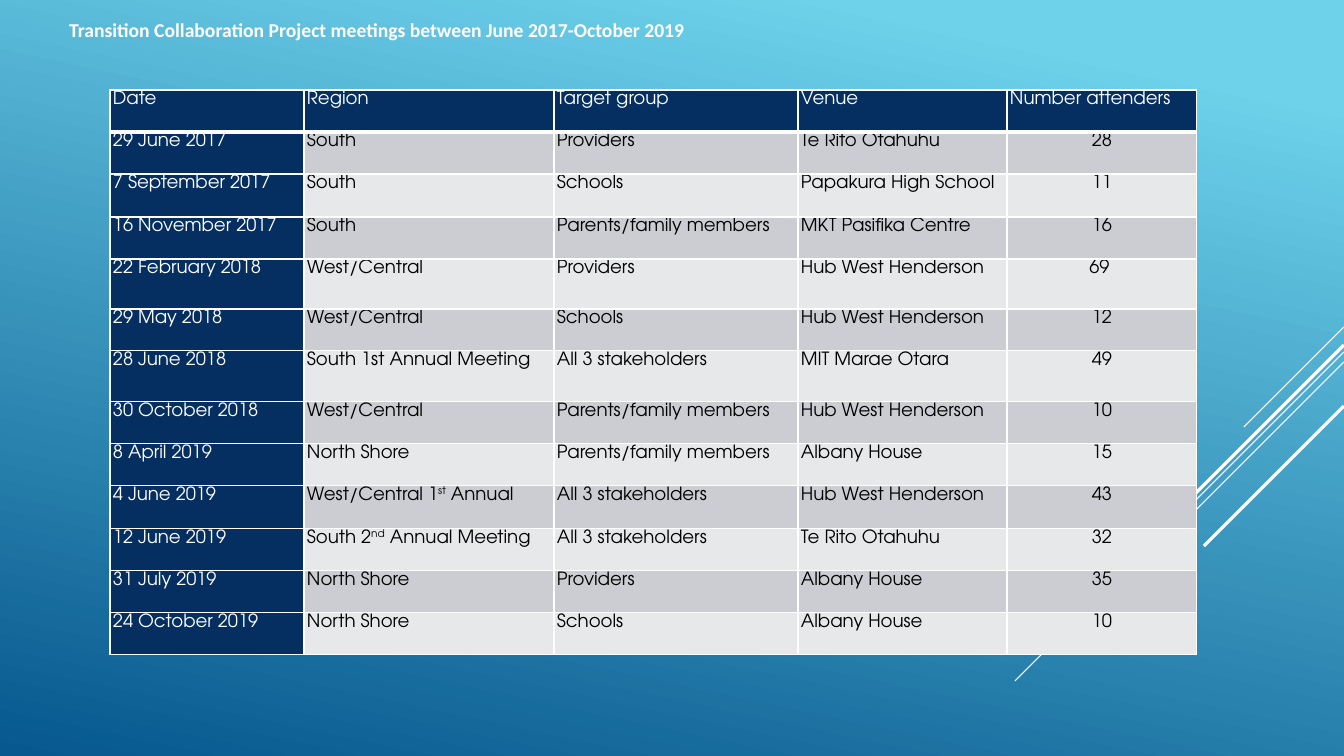
from itertools import pairwise

from lxml.etree import SubElement
from pptx import Presentation
from pptx.dml.color import RGBColor
from pptx.enum.shapes import MSO_CONNECTOR
from pptx.enum.text import MSO_ANCHOR, MSO_AUTO_SIZE, PP_ALIGN
from pptx.oxml.ns import qn
from pptx.util import Pt

WHITE = RGBColor(0xFF, 0xFF, 0xFF)
BLACK = RGBColor(0x00, 0x00, 0x00)
NAVY = RGBColor(0x05, 0x2F, 0x61)
GRAY = RGBColor(0xCC, 0xCD, 0xD2)
PALE = RGBColor(0xE7, 0xE8, 0xEA)
SKY = RGBColor(0x6E, 0xD2, 0xEB)
DEEP = RGBColor(0x06, 0x58, 0x8E)

WIDE, HIGH = 1344, 756
TITLE = "Transition Collaboration Project meetings between June 2017-October 2019"
TITLE_BOX = (59, 13, 773, 34)
ROWS = [
    ("Date", "Region", "Target group", "Venue", "Number attenders"),
    ("29 June 2017", "South", "Providers", "Te Rito Otahuhu", "28"),
    ("7 September 2017", "South", "Schools", "Papakura High School", "11"),
    ("16 November 2017", "South", "Parents/family members", "MKT Pasifika Centre", "16"),
    ("22 February 2018", "West/Central", "Providers", "Hub West Henderson", "69 "),
    ("29 May 2018", "West/Central", "Schools", "Hub West Henderson", "12"),
    ("28 June 2018", "South 1st Annual Meeting", "All 3 stakeholders", "MIT Marae Otara", "49"),
    ("30 October 2018", "West/Central", "Parents/family members", "Hub West Henderson", "10"),
    ("8 April 2019", "North Shore", "Parents/family members", "Albany House", "15"),
    ("4 June 2019", "West/Central 1^st^ Annual", "All 3 stakeholders", "Hub West Henderson", "43"),
    ("12 June 2019", "South 2^nd^ Annual Meeting", "All 3 stakeholders", "Te Rito Otahuhu", "32"),
    ("31 July 2019", "North Shore", "Providers", "Albany House", "35"),
    ("24 October 2019", "North Shore", "Schools", "Albany House", "10"),
]
COL_EDGES = [110, 304, 554, 798, 1007, 1197]
ROW_EDGES = [90, 132, 174, 217, 259, 309, 351, 402, 444, 486, 529, 571, 613, 655]
RAYS = [(327, 100, 0.75), (352, 329, 0.75), (362, 209, 0.75), (345, 192, 2.25), (406, 140, 2.25)]


def px(num):
    """Turn px into EMU."""
    return round(num * 12192000 / WIDE)


def write(frame, text, size=13, font="TeX Gyre Adventor", color=BLACK,
          bold=False, align=PP_ALIGN.LEFT, lines=1.07, after=0):
    """Fill a frame with one paragraph, with ^marks^ around superscripts."""
    para = frame.paragraphs[0]
    para.alignment, para.line_spacing, para.space_after = align, lines, Pt(after)
    for pos, part in enumerate(text.split("^")):
        run = para.add_run()
        run.text = part
        run.font.size, run.font.name, run.font.bold = Pt(size), font, bold
        run.font.color.rgb = color
        if pos % 2:
            run.font._element.set("baseline", "30000")


def edge(cell, base):
    """Draw white borders around a cell."""
    props = cell._tc.get_or_add_tcPr()
    for side, width in (("L", 1), ("R", 1), ("T", 1), ("B", base)):
        line = SubElement(props, qn(f"a:ln{side}"), w=str(Pt(width)))
        fill = SubElement(line, qn("a:solidFill"))
        SubElement(fill, qn("a:srgbClr"), val=str(WHITE))


def add_rays(slide):
    """Draw the diagonal lines that run in from the right side."""
    for top, span, width in RAYS:
        ray = slide.shapes.add_connector(
            MSO_CONNECTOR.STRAIGHT, px(WIDE), px(top), px(WIDE - span), px(top + span))
        ray.line.color.rgb, ray.line.width = WHITE, Pt(width)
        SubElement(ray._element.spPr, qn("a:effectLst"))


def add_grid(slide):
    """Build the table of meetings."""
    left, top = COL_EDGES[0], ROW_EDGES[0]
    table = slide.shapes.add_table(
        len(ROWS), len(ROWS[0]), px(left), px(top),
        px(COL_EDGES[-1] - left), px(ROW_EDGES[-1] - top)).table
    for col, (start, end) in zip(table.columns, pairwise(COL_EDGES)):
        col.width = px(end - start)
    for row, (start, end) in zip(table.rows, pairwise(ROW_EDGES)):
        row.height = px(end - start)
    for r, row in enumerate(ROWS):
        for c, text in enumerate(row):
            cell = table.cell(r, c)
            head = r == 0 or c == 0
            edge(cell, 1 if r else 3)
            cell.fill.solid()
            cell.fill.fore_color.rgb = NAVY if head else GRAY if r % 2 else PALE
            cell.margin_left = cell.margin_right = px(3)
            cell.margin_top = cell.margin_bottom = 0
            write(cell.text_frame, text, color=WHITE if head else BLACK,
                  align=PP_ALIGN.CENTER if r and c == 4 else PP_ALIGN.LEFT)


def add_title(slide):
    """Place and format the title."""
    title = slide.shapes.title
    title.left, title.top, title.width, title.height = map(px, TITLE_BOX)
    frame = title.text_frame
    frame.word_wrap, frame.vertical_anchor = True, MSO_ANCHOR.MIDDLE
    frame.auto_size = MSO_AUTO_SIZE.SHAPE_TO_FIT_TEXT
    write(frame, TITLE, size=14, font="Calibri", color=WHITE, bold=True, lines=1.0, after=6)


def main():
    """Build the slide and save it."""
    deck = Presentation()
    deck.slide_width, deck.slide_height = px(WIDE), px(HIGH)
    slide = deck.slides.add_slide(deck.slide_layouts[5])
    fill = slide.background.fill
    fill.gradient()
    fill.gradient_angle = 360 - 102
    for stop, spot, color in zip(fill.gradient_stops, (0.1, 1), (SKY, DEEP)):
        stop.position, stop.color.rgb = spot, color
    add_rays(slide)
    add_grid(slide)
    add_title(slide)
    deck.save("out.pptx")


if __name__ == "__main__":
    main()
